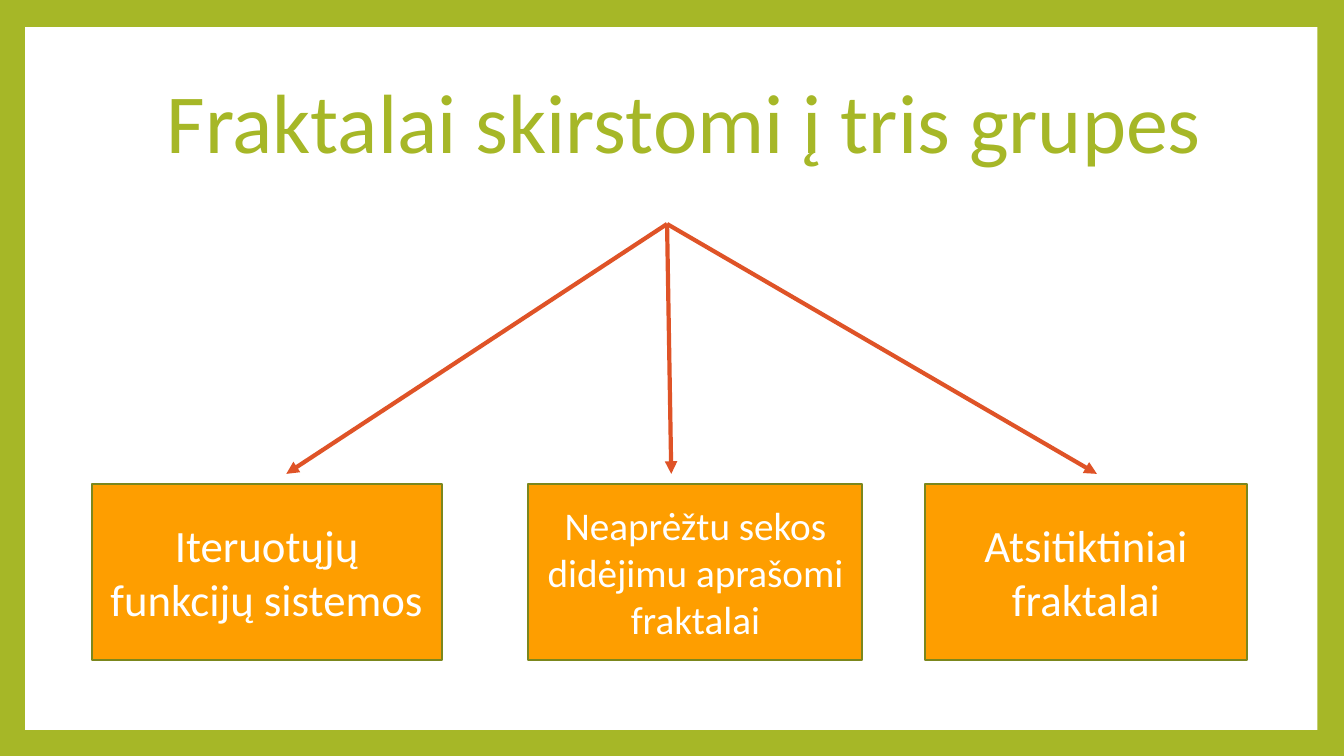
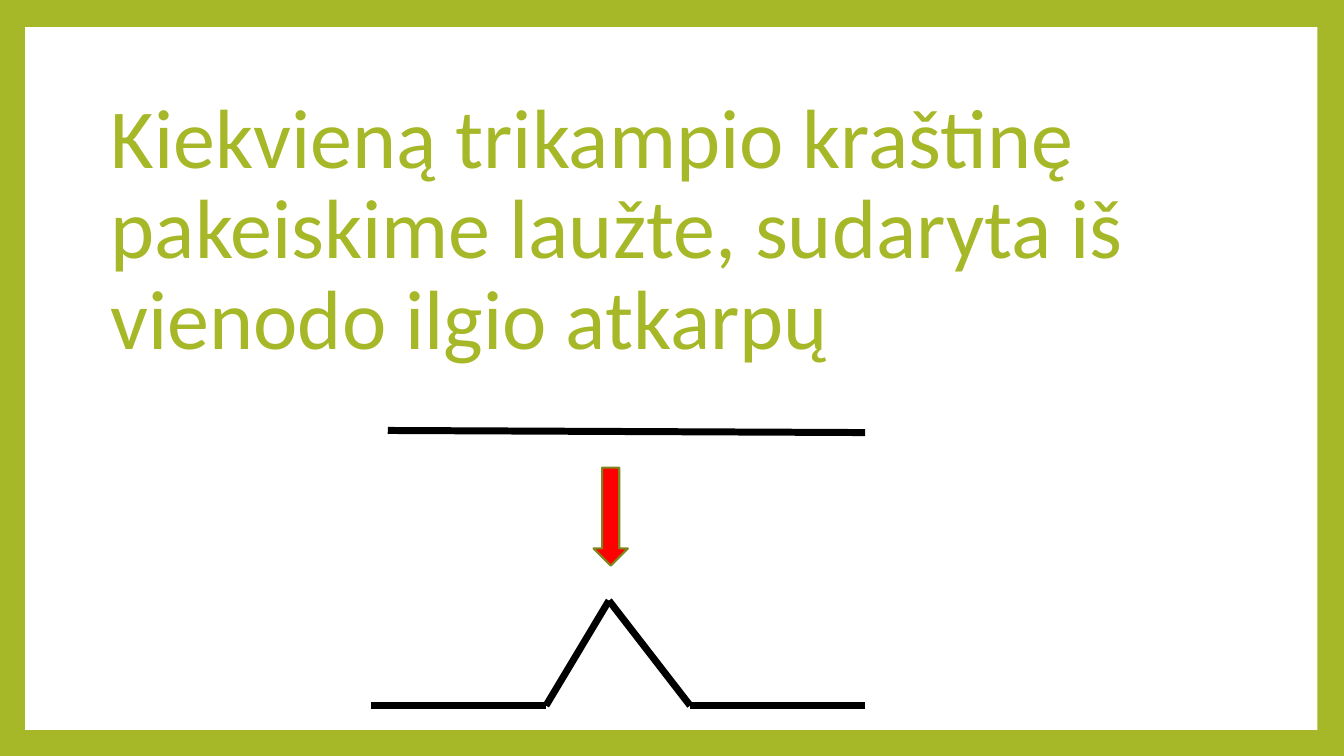
from dataclasses import dataclass

from lxml import etree
from pptx import Presentation
from pptx.dml.color import RGBColor
from pptx.enum.shapes import MSO_CONNECTOR, MSO_SHAPE
from pptx.enum.text import MSO_ANCHOR, PP_ALIGN
from pptx.oxml.ns import qn
from pptx.util import Pt

STRAIGHT = MSO_CONNECTOR.STRAIGHT
RECT, DOWN_ARROW = MSO_SHAPE.RECTANGLE, MSO_SHAPE.DOWN_ARROW
MIDDLE = MSO_ANCHOR.MIDDLE
LEFT, CENTER = PP_ALIGN.LEFT, PP_ALIGN.CENTER


@dataclass(frozen=True)
class Theme:
    font: str = "Calibri"
    green: RGBColor = RGBColor(0xA6, 0xB7, 0x27)
    olive: RGBColor = RGBColor(0x7B, 0x87, 0x1D)
    orange: RGBColor = RGBColor(0xFE, 0x9E, 0x00)
    rust: RGBColor = RGBColor(0xDF, 0x53, 0x27)
    red: RGBColor = RGBColor(0xFF, 0x00, 0x00)
    white: RGBColor = RGBColor(0xFF, 0xFF, 0xFF)
    black: RGBColor = RGBColor(0x00, 0x00, 0x00)
    title: int = 60
    label: int = 32
    small_label: int = 28
    outline: float = 1.5
    branch: float = 3
    segment: float = 5


THEME = Theme()
SLIDE_W, SLIDE_H = 960, 540
PANEL = (18, 19.3, 923, 502)


def pts(*values):
    return [Pt(v) for v in values]


def set_text(sp, text, size, color, align, spacing=1.0):
    tf = sp.text_frame
    tf.word_wrap = True
    tf.vertical_anchor = MIDDLE
    tf.text = text
    p = tf.paragraphs[0]
    p.alignment = align
    p.line_spacing = spacing
    font = p.runs[0].font
    font.name, font.size = THEME.font, Pt(size)
    font.color.rgb = color


def add_filled(s, kind, box, fill, outline=None):
    sp = s.shapes.add_shape(kind, *pts(*box))
    sp.shadow.inherit = False
    sp.fill.solid()
    sp.fill.fore_color.rgb = fill
    if outline is None:
        sp.line.fill.background()
    else:
        sp.line.color.rgb = outline
        sp.line.width = Pt(THEME.outline)
    return sp


def add_line(s, start, end, color, width, arrow=False):
    line = s.shapes.add_connector(STRAIGHT, *pts(*start, *end))
    line.line.color.rgb = color
    line.line.width = Pt(width)
    if arrow:
        etree.SubElement(line.line._get_or_add_ln(), qn("a:tailEnd"), type="triangle")
    etree.SubElement(line._element.spPr, qn("a:effectLst"))


def add_framed_slide(prs):
    """Add a slide with the white panel inside the green border."""
    s = prs.slides.add_slide(prs.slide_layouts[6])
    add_filled(s, RECT, PANEL, THEME.white)
    return s


def add_title(s, box, text, align):
    sp = s.shapes.add_textbox(*pts(*box))
    set_text(sp, text, THEME.title, THEME.green, align, spacing=0.9)


def add_groups(s, box, groups):
    """Place the labelled boxes along the bottom of the area."""
    x, y, _, h = box
    for offset, width, size, text in groups:
        sp = add_filled(s, RECT, (x + offset, y, width, h), THEME.orange, THEME.olive)
        set_text(sp, text, size, THEME.white, CENTER)


def add_branches(s, box, root, tips):
    """Draw arrows from a root on the top edge to tips on the bottom edge."""
    x, y, _, h = box
    for tip in tips:
        add_line(s, (x + root, y), (x + tip, y + h), THEME.rust, THEME.branch, arrow=True)


def add_broken_line(s, box, left_foot, peak, right_foot):
    """Draw a flat line whose middle part is raised to a peak."""
    x, y, w, h = box
    corners = [(0, h), (left_foot, h), (peak, 0), (right_foot, h), (w, h)]
    points = [(x + dx, y + dy) for dx, dy in corners]
    for start, end in zip(points, points[1:]):
        add_line(s, start, end, THEME.black, THEME.segment)


def build_groups_slide(prs):
    s = add_framed_slide(prs)
    add_title(s, (56, 26.5, 865, 127), "Fraktalai skirstomi į tris grupes", CENTER)
    add_groups(s, (65.5, 345.5, 825, 126), [
        (0, 250, THEME.label, "Iteruotųjų funkcijų sistemos"),
        (312, 238.5, THEME.small_label, "Neaprėžtu sekos didėjimu aprašomi fraktalai"),
        (595.5, 229.5, THEME.label, "Atsitiktiniai fraktalai"),
    ])
    add_branches(s, (204.5, 160, 579, 178.5), 272, (275, 0, 579))


def build_replacement_slide(prs):
    s = add_framed_slide(prs)
    add_title(s, (72, 57, 867, 217),
              "Kiekvieną trikampio kraštinę pakeiskime laužte, sudaryta iš vienodo ilgio atkarpų",
              LEFT)
    add_line(s, (277, 307.5), (618, 309), THEME.black, THEME.segment)
    add_broken_line(s, (265, 429, 353, 75), 125, 170, 228)
    add_filled(s, DOWN_ARROW, (424, 334, 24.5, 70), THEME.red, THEME.olive)


def main():
    prs = Presentation()
    prs.slide_width, prs.slide_height = pts(SLIDE_W, SLIDE_H)
    background = prs.slide_master.background.fill
    background.solid()
    background.fore_color.rgb = THEME.green
    build_groups_slide(prs)
    build_replacement_slide(prs)
    prs.save("out.pptx")


if __name__ == "__main__":
    main()
